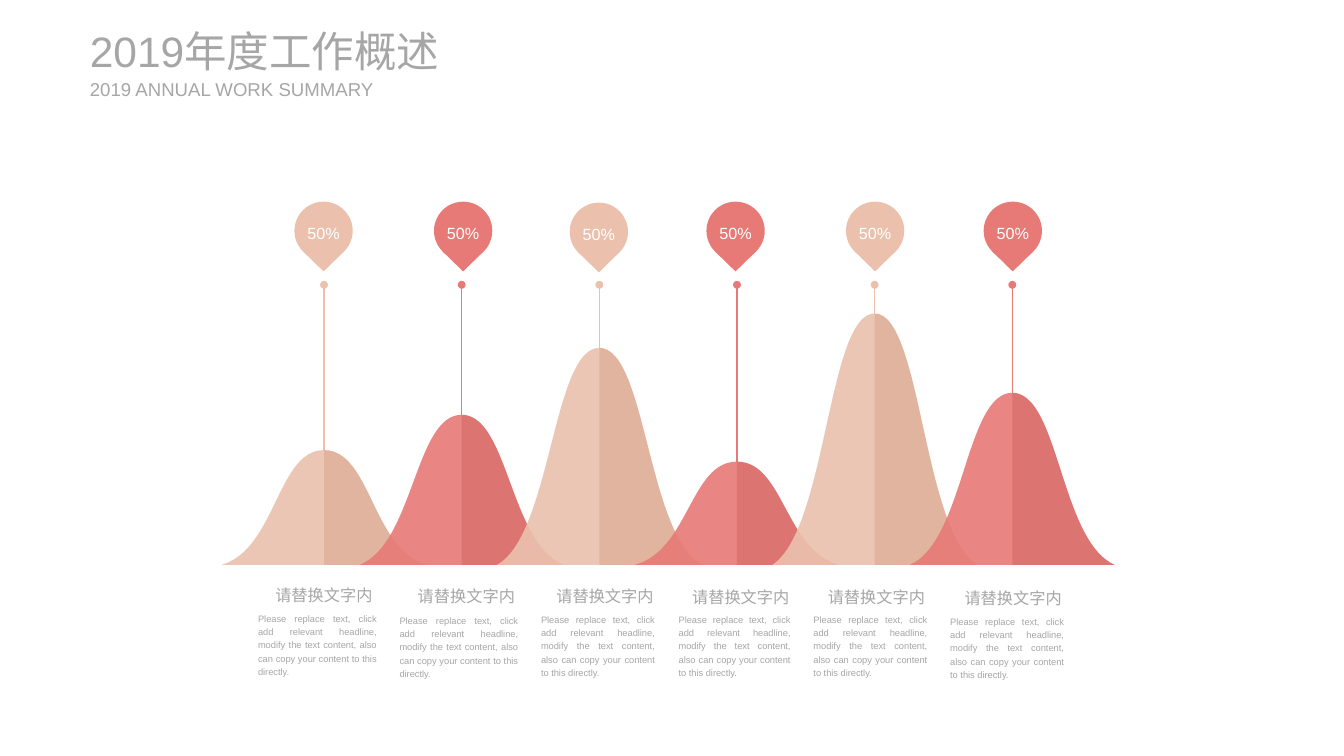
from lxml.etree import SubElement
from pptx import Presentation
from pptx.dml.color import RGBColor
from pptx.enum.shapes import MSO_CONNECTOR, MSO_SHAPE
from pptx.enum.text import MSO_ANCHOR, MSO_AUTO_SIZE, PP_ALIGN
from pptx.oxml.ns import qn
from pptx.util import Inches, Pt


def paint(shape, color, opacity=100):
    shape.shadow.inherit = False
    shape.fill.solid()
    shape.fill.fore_color.rgb = RGBColor.from_string(color)
    shape.line.fill.background()
    if opacity < 100:
        color_element = shape._element.spPr.find(qn("a:solidFill"))[0]
        SubElement(color_element, qn("a:alpha")).set("val", str(opacity * 1000))


def write(shape, text, size, color, alignment, anchor, spacing=1.0, wrap=True):
    frame = shape.text_frame
    frame.margin_left = frame.margin_right = frame.margin_top = frame.margin_bottom = 0
    frame.word_wrap = wrap
    frame.auto_size = MSO_AUTO_SIZE.NONE
    frame.vertical_anchor = anchor
    frame.text = text
    paragraph = frame.paragraphs[0]
    paragraph.alignment = alignment
    paragraph.line_spacing = spacing
    paragraph.font.size = Pt(size)
    paragraph.font.name = "Arial"
    paragraph.font.color.rgb = RGBColor.from_string(color)


GRAY = "A6A6A6"
PEACH = ("EBC1AD", "A45028")
CORAL = ("E77976", "941D1A")
BASE = 5.91
HALF_WIDTH = 1.07
DESCRIPTION = (
    "Please replace text, click add relevant headline, modify the text content, "
    "also can copy your content to this directly."
)

hill_tops = [4.71, 4.34, 3.64, 4.83, 3.28, 4.11]
stem_ends = [4.71, 4.34, 3.64, 4.83, 3.31, 4.11]
pin_places = [(3.08, 2.11), (4.54, 2.11), (5.96, 2.12), (7.39, 2.11), (8.85, 2.11), (10.29, 2.11)]
heading_places = [(2.88, 6.08), (4.37, 6.09), (5.82, 6.09), (7.24, 6.1), (8.66, 6.1), (10.09, 6.11)]
description_places = [
    (2.7, 6.39, 1.24), (4.18, 6.41, 1.24), (5.66, 6.4, 1.19),
    (7.1, 6.4, 1.17), (8.51, 6.4, 1.19), (9.94, 6.42, 1.19),
]
centers = [3.39 + 1.44 * index for index in range(6)]
palettes = [PEACH, CORAL] * 3

presentation = Presentation()
presentation.slide_width = Inches(14.06)
presentation.slide_height = Inches(7.91)
slide = presentation.slides.add_slide(presentation.slide_layouts[5])
shapes = slide.shapes

title = shapes.title
title.left, title.top, title.width, title.height = [Inches(v) for v in (0.94, 0.26, 4.32, 0.54)]
write(title, "2019年度工作概述", 32, GRAY, PP_ALIGN.LEFT, MSO_ANCHOR.MIDDLE)
subtitle = shapes.add_textbox(Inches(0.94), Inches(0.81), Inches(3.07), Inches(0.24))
write(subtitle, "2019 ANNUAL WORK SUMMARY", 14, GRAY, PP_ALIGN.LEFT, MSO_ANCHOR.MIDDLE)

for center, top, (color, shade) in zip(centers, hill_tops, palettes):
    peak, middle = (center, top), (center, BASE)
    left_foot, right_foot = (center - HALF_WIDTH, BASE), (center + HALF_WIDTH, BASE)
    bend = BASE - 0.14 * (BASE - top)
    left_bends = [(center - 0.49, top), (center - 0.5, bend)]
    right_bends = [(center + 0.5, bend), (center + 0.49, top)]
    for outline, curves, fill, opacity in (
        ([peak, left_foot, right_foot, peak], {0: left_bends, 2: right_bends}, color, 91),
        ([right_foot, peak, middle], {0: right_bends}, shade, 15),
    ):
        points = [(Inches(x), Inches(y)) for x, y in outline]
        builder = shapes.build_freeform(*points[0])
        builder.add_line_segments(points[1:])
        hill = builder.convert_to_shape()
        segments = list(hill._element.iter(qn("a:lnTo")))
        for index, bends in curves.items():
            segment = segments[index]
            end = segment[0]
            segment.tag = qn("a:cubicBezTo")
            for x, y in bends:
                control = SubElement(segment, qn("a:pt"))
                control.set("x", str(Inches(x) - hill.left))
                control.set("y", str(Inches(y) - hill.top))
            segment.append(end)
        paint(hill, fill, opacity)

for (left, top), (color, shade) in zip(pin_places, palettes):
    bubble = shapes.add_shape(MSO_SHAPE.OVAL, Inches(left), Inches(top), Inches(0.61), Inches(0.61))
    paint(bubble, color)
    write(bubble, "50%", 12.2, "FFFFFF", PP_ALIGN.CENTER, MSO_ANCHOR.MIDDLE, 1.2)
    builder = shapes.build_freeform(Inches(left + 0.09), Inches(top + 0.52))
    builder.add_line_segments([
        (Inches(left + 0.52), Inches(top + 0.52)),
        (Inches(left + 0.61 / 2), Inches(top + 0.73)),
    ])
    paint(builder.convert_to_shape(), color)

for center, end, (color, shade) in zip(centers, stem_ends, palettes):
    stem = shapes.add_connector(
        MSO_CONNECTOR.STRAIGHT, Inches(center), Inches(2.98), Inches(center), Inches(end)
    )
    stem.line.color.rgb = RGBColor.from_string(color)
    stem.line.width = Pt(1)
    SubElement(stem.line._get_or_add_ln(), qn("a:headEnd")).set("type", "oval")
    SubElement(stem._element.spPr, qn("a:effectLst"))

for (heading_left, heading_top), (left, top, width) in zip(heading_places, description_places):
    heading = shapes.add_textbox(Inches(heading_left), Inches(heading_top), Inches(1.02), Inches(0.25))
    write(heading, "请替换文字内", 12.2, GRAY, PP_ALIGN.JUSTIFY, MSO_ANCHOR.TOP, 1.2, False)
    description = shapes.add_textbox(Inches(left), Inches(top), Inches(width), Inches(0.69))
    write(description, DESCRIPTION, 7, GRAY, PP_ALIGN.JUSTIFY, MSO_ANCHOR.TOP, 1.2)

presentation.save("out.pptx")
